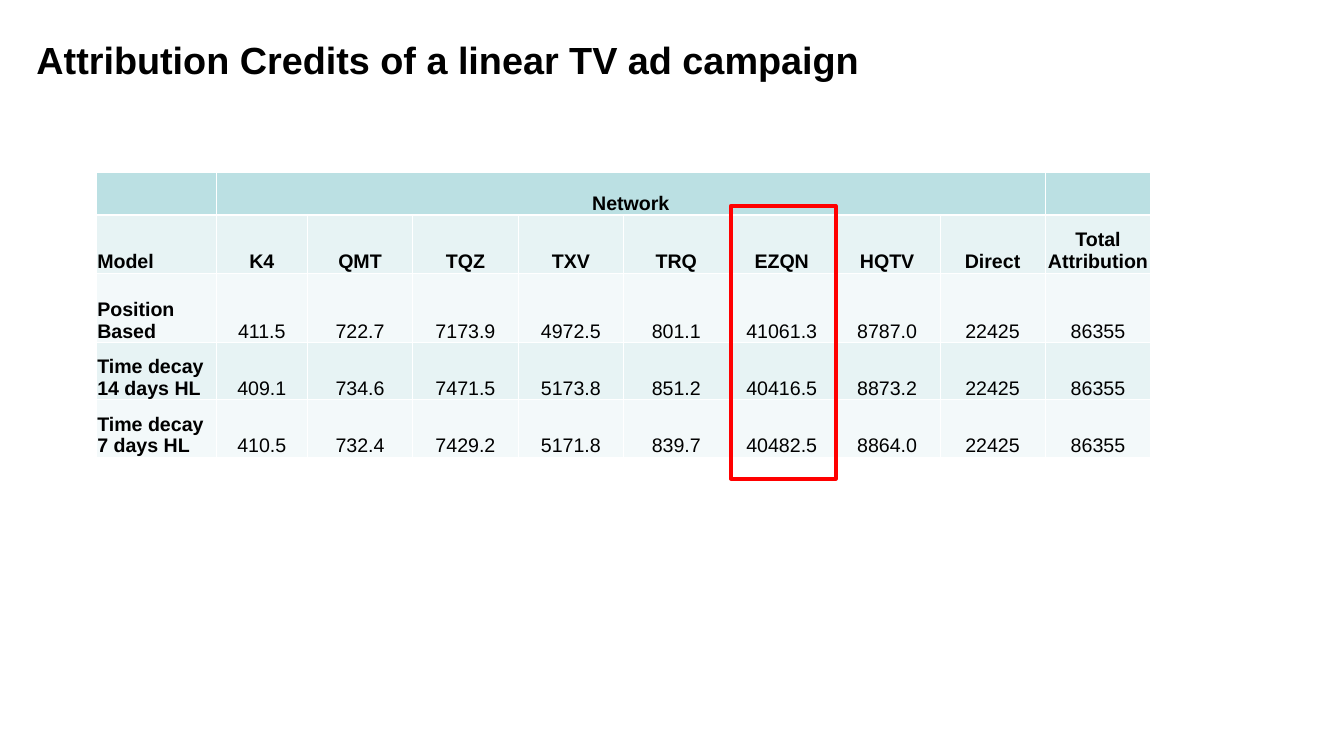
from dataclasses import dataclass

from lxml import etree
from pptx import Presentation
from pptx.dml.color import RGBColor
from pptx.enum.shapes import MSO_SHAPE
from pptx.enum.text import MSO_ANCHOR, PP_ALIGN
from pptx.oxml.ns import qn
from pptx.util import Pt

EMU_PER_PX = 12700
BLANK_LAYOUT = 6
LEFT, CENTER = PP_ALIGN.LEFT, PP_ALIGN.CENTER
MIDDLE, BOTTOM = MSO_ANCHOR.MIDDLE, MSO_ANCHOR.BOTTOM
RECTANGLE = MSO_SHAPE.RECTANGLE


@dataclass(frozen=True)
class Theme:
    """Colours, font and type sizes of the slide."""
    font: str = "Arial"
    text: str = "000000"
    border: str = "FFFFFF"
    header: str = "BBE0E3"
    bands: tuple = ("E7F3F4", "F3F9FA")
    highlight: str = "FF0000"
    title_size: int = 54
    table_size: int = 28


def px(length):
    """Convert pixels to EMU."""
    return length * EMU_PER_PX


def assign(target, values):
    """Set each named attribute on the target."""
    for name, value in values.items():
        setattr(target, name, value)


class SlideBuilder:
    """Draws styled elements on the current slide."""

    def __init__(self, slide, theme):
        self.slide = slide
        self.theme = theme

    def add_text(self, frame, text, size, bold, align):
        """Put one styled paragraph in a text frame."""
        paragraph = frame.paragraphs[0]
        paragraph.alignment = align
        run = paragraph.add_run()
        run.text = text
        assign(run.font, {"name": self.theme.font, "size": Pt(size), "bold": bold})
        run.font.color.rgb = RGBColor.from_string(self.theme.text)

    def title(self, text, box):
        """Add the slide title."""
        frame = self.slide.shapes.add_textbox(*map(px, box)).text_frame
        margins = dict.fromkeys(("margin_left", "margin_top", "margin_right", "margin_bottom"), px(3))
        assign(frame, {"word_wrap": True, "vertical_anchor": MIDDLE, **margins})
        self.add_text(frame, text, self.theme.title_size, True, LEFT)

    def borders(self, cell, top, bottom):
        """Draw the four borders of a cell."""
        properties = cell._tc.get_or_add_tcPr()
        for side, width in {"lnL": 1, "lnR": 1, "lnT": top, "lnB": bottom}.items():
            line = etree.SubElement(properties, qn(f"a:{side}"), w=str(Pt(width)))
            fill = etree.SubElement(line, qn("a:solidFill"))
            etree.SubElement(fill, qn("a:srgbClr"), val=self.theme.border)

    def cell(self, cell, text, row, column):
        """Style and fill one table cell."""
        assign(cell, {"margin_left": px(1), "margin_top": px(1), "margin_right": px(1),
                      "margin_bottom": 0, "vertical_anchor": BOTTOM})
        self.borders(cell, 3 if row == 1 else 1, 3 if row == 0 else 1)
        color = self.theme.bands[(row - 1) % 2] if row else self.theme.header
        cell.fill.solid()
        cell.fill.fore_color.rgb = RGBColor.from_string(color)
        if text:
            self.add_text(cell.text_frame, text, self.theme.table_size,
                          row < 2 or column == 0, CENTER if column else LEFT)

    def table(self, rows, box, lead_widths, heights):
        """Add a table whose remaining columns share the width equally."""
        columns = len(rows[0])
        table = self.slide.shapes.add_table(len(rows), columns, *map(px, box)).table
        assign(table, {"first_row": False, "horz_banding": False})
        equal_count = columns - len(lead_widths)
        equal_width = px(box[2] - sum(lead_widths)) // equal_count
        widths = [*map(px, lead_widths), *[equal_width] * equal_count]
        for column, width in zip(table.columns, widths):
            column.width = width
        for row, height in zip(table.rows, heights):
            row.height = px(height)
        for row, values in enumerate(rows):
            for column, text in enumerate(values):
                self.cell(table.cell(row, column), text, row, column)
        table.cell(0, 1).merge(table.cell(0, columns - 2))

    def outline(self, box):
        """Add an unfilled highlight rectangle."""
        shape = self.slide.shapes.add_shape(RECTANGLE, *map(px, box))
        shape.shadow.inherit = False
        shape.fill.background()
        shape.line.color.rgb = RGBColor.from_string(self.theme.highlight)
        shape.line.width = Pt(5)


ATTRIBUTION_ROWS = [
    ["", "Network", *[""] * 8],
    ["Model", "K4", "QMT", "TQZ", "TXV", "TRQ", "EZQN", "HQTV", "Direct", "Total Attribution"],
    ["Position Based", "411.5", "722.7", "7173.9", "4972.5", "801.1", "41061.3", "8787.0", "22425", "86355"],
    ["Time decay 14 days HL", "409.1", "734.6", "7471.5", "5173.8", "851.2", "40416.5", "8873.2", "22425", "86355"],
    ["Time decay 7 days HL", "410.5", "732.4", "7429.2", "5171.8", "839.7", "40482.5", "8864.0", "22425", "86355"],
]


def main():
    """Build and save the attribution slide."""
    presentation = Presentation()
    assign(presentation, {"slide_width": px(1920), "slide_height": px(1080)})
    slide = presentation.slides.add_slide(presentation.slide_layouts[BLANK_LAYOUT])
    builder = SlideBuilder(slide, Theme())
    builder.title("Attribution Credits of a linear TV ad campaign", (49, 19, 1822, 131))
    builder.table(ATTRIBUTION_ROWS, (138, 246, 1506, 408), (171, 130), (61, 83, 99, 82, 82))
    builder.outline((1044, 294, 150, 390))
    presentation.save("out.pptx")


if __name__ == "__main__":
    main()
